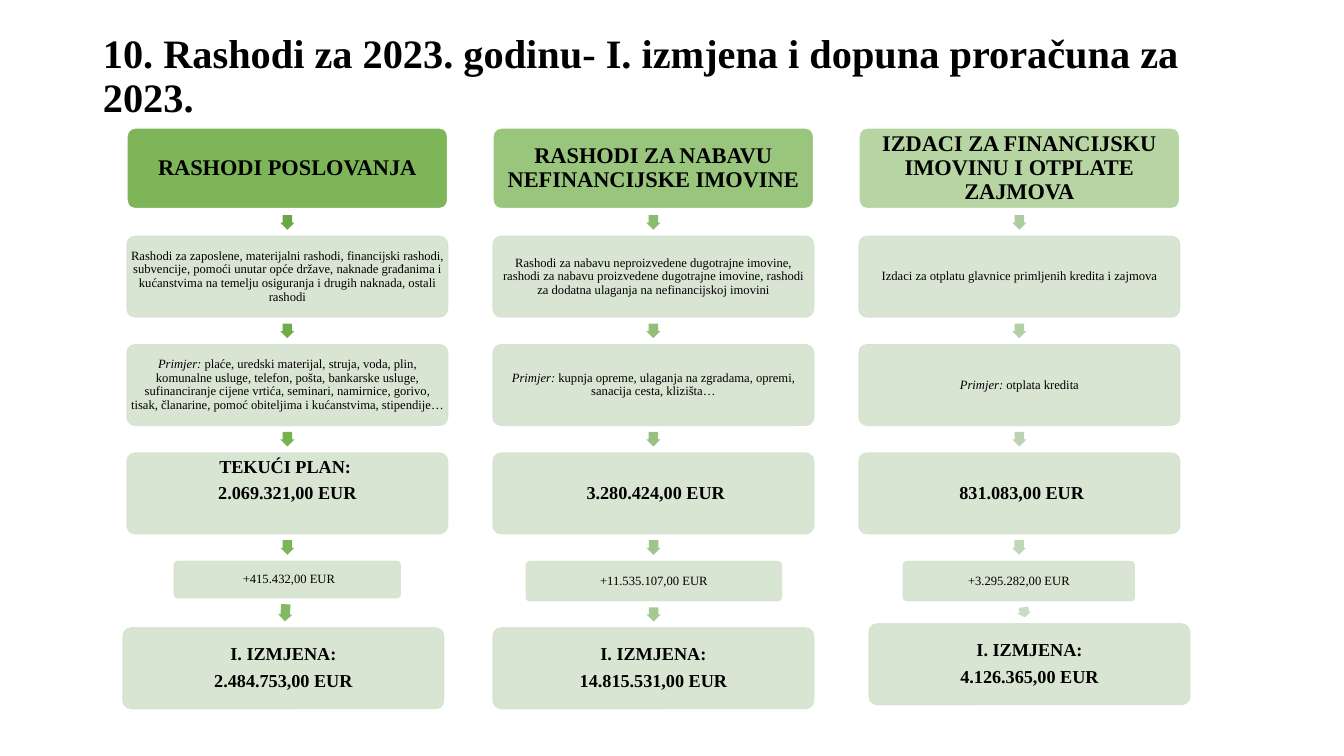
import math
from collections import namedtuple

from lxml import etree
from pptx import Presentation
from pptx.dml.color import RGBColor
from pptx.enum.shapes import MSO_SHAPE
from pptx.enum.text import MSO_ANCHOR, MSO_AUTO_SIZE, PP_ALIGN
from pptx.oxml.ns import qn
from pptx.util import Inches, Pt

ROUNDED, ARROW = MSO_SHAPE.ROUNDED_RECTANGLE, MSO_SHAPE.RIGHT_ARROW
TOP, MIDDLE = MSO_ANCHOR.TOP, MSO_ANCHOR.MIDDLE
LEFT, CENTER = PP_ALIGN.LEFT, PP_ALIGN.CENTER
NO_FIT = MSO_AUTO_SIZE.NONE

BLACK = RGBColor(0x00, 0x00, 0x00)
WHITE = RGBColor(0xFF, 0xFF, 0xFF)
GREEN = RGBColor(0x70, 0xAD, 0x47)
PALE_GREEN = RGBColor(0xD5, 0xE3, 0xCF)
FONT = "Times New Roman"
LEAD = "Primjer:"

# Inches
BOX_WIDTH, BOX_HEIGHT = 3.18, 0.8
FIRST_LEFT, FIRST_TOP = 1.26, 1.27
COLUMN_PITCH, ROW_PITCH = 3.63, 1.075
ARROW_WIDTH, ARROW_CLEARANCE = 0.14, 0.13

Box = namedtuple("Box", "left top width height")
Column = namedtuple("Column", "opacity arrows header content example plan change "
                              "revision change_box revision_box")

COLUMNS = [
    Column(90, ["6BA544", "70AD49", "76B350", "7DB65A", "83B864"],
           "RASHODI POSLOVANJA",
           "Rashodi za zaposlene, materijalni rashodi, financijski rashodi, "
           "subvencije, pomoći unutar opće države, naknade građanima i kućanstvima "
           "na temelju osiguranja i drugih naknada, ostali rashodi",
           "Primjer: plaće, uredski materijal, struja, voda, plin, komunalne usluge, "
           "telefon, pošta, bankarske usluge, sufinanciranje cijene vrtića, seminari, "
           "namirnice, gorivo, tisak, članarine, pomoć obiteljima i kućanstvima, "
           "stipendije…",
           "TEKUĆI PLAN: \n2.069.321,00 EUR",
           " +415.432,00 EUR",
           " I. IZMJENA: \n2.484.753,00 EUR",
           Box(1.73, 5.57, 2.24, 0.36), Box(1.22, 6.23, BOX_WIDTH, BOX_HEIGHT)),
    Column(70, ["8ABB6E", "91BE78", "98C181", "9FC58B", "A6C894"],
           "RASHODI ZA NABAVU NEFINANCIJSKE IMOVINE",
           "Rashodi za nabavu neproizvedene dugotrajne imovine, rashodi za nabavu "
           "proizvedene dugotrajne imovine, rashodi za dodatna ulaganja na "
           "nefinancijskoj imovini",
           "Primjer: kupnja opreme, ulaganja na zgradama, opremi, sanacija cesta, "
           "klizišta…",
           " 3.280.424,00 EUR",
           "+11.535.107,00 EUR",
           " I. IZMJENA: \n14.815.531,00 EUR",
           Box(5.22, 5.57, 2.53, 0.39), Box(4.89, 6.23, BOX_WIDTH, BOX_HEIGHT)),
    Column(50, ["ADCC9E", "B4CFA7", "BBD3B0", "C2D7B9", "C9DBC1"],
           "IZDACI ZA FINANCIJSKU IMOVINU I OTPLATE ZAJMOVA",
           "Izdaci za otplatu glavnice primljenih kredita i zajmova",
           "Primjer: otplata kredita",
           " 831.083,00 EUR",
           "+3.295.282,00 EUR",
           " I. IZMJENA: \n4.126.365,00 EUR",
           Box(8.96, 5.57, 2.29, 0.39), Box(8.62, 6.19, BOX_WIDTH, BOX_HEIGHT)),
]


def set_opacity(color_format_owner, percent):
    """Add an alpha value to the solid fill of a shape's fill or line element."""
    color = color_format_owner.find(qn("a:solidFill"))[0]
    etree.SubElement(color, qn("a:alpha"), val=str(percent * 1000))


def add_preset(page, preset, box):
    shape = page.shapes.add_shape(preset, *(Inches(length) for length in box))
    shape.shadow.inherit = False
    shape.fill.solid()
    return shape


def write_text(shape, text, size, bold, anchor):
    frame = shape.text_frame
    frame.word_wrap = True
    frame.vertical_anchor = anchor
    inset = Inches(0.01 if size < 10 else 0.02)
    frame.margin_left = frame.margin_right = inset
    frame.margin_top = frame.margin_bottom = inset
    for index, line in enumerate(text.split("\n")):
        para = frame.add_paragraph() if index else frame.paragraphs[0]
        para.alignment = CENTER
        para.line_spacing = 0.9
        para.space_after = Pt(round(size * 0.38))
        para.font.name, para.font.size = FONT, Pt(size)
        para.font.bold, para.font.color.rgb = bold, BLACK
        if line.startswith(LEAD):
            lead = para.add_run()
            lead.text = LEAD
            lead.font.italic = True
            line = line[len(LEAD):]
        para.add_run().text = line


def add_card(page, box, text, size, bold=False, anchor=MIDDLE,
             fill=PALE_GREEN, opacity=90):
    card = add_preset(page, ROUNDED, box)
    card.adjustments[0] = 0.1
    card.fill.fore_color.rgb = fill
    set_opacity(card._element.spPr, opacity)
    card.line.width = Pt(1)
    if fill == PALE_GREEN:
        card.line.color.rgb = PALE_GREEN
        set_opacity(card.line._get_or_add_ln(), opacity)
    else:
        card.line.color.rgb = WHITE
    write_text(card, text, size, bold, anchor)


def add_arrow(page, upper, lower, color):
    """Centre an arrow in the gap, pointing from one box's middle to the next's."""
    upper_x, lower_x = (box.left + box.width / 2 for box in (upper, lower))
    upper_y, lower_y = (box.top + box.height / 2 for box in (upper, lower))
    bottom = upper.top + upper.height
    length = lower.top - bottom - ARROW_CLEARANCE
    center_x, center_y = (upper_x + lower_x) / 2, (bottom + lower.top) / 2
    arrow = add_preset(page, ARROW, Box(center_x - length / 2,
                                        center_y - ARROW_WIDTH / 2,
                                        length, ARROW_WIDTH))
    arrow.adjustments[0], arrow.adjustments[1] = 0.667, 0.5
    arrow.rotation = round(math.degrees(math.atan2(lower_y - upper_y,
                                                   lower_x - upper_x)))
    arrow.fill.fore_color.rgb = RGBColor.from_string(color)
    arrow.line.fill.background()


def add_column(page, left, column):
    boxes = [Box(left, FIRST_TOP + row * ROW_PITCH, BOX_WIDTH, BOX_HEIGHT)
             for row in range(4)]
    boxes += [column.change_box, column.revision_box]
    plan_anchor = TOP if "\n" in column.plan else MIDDLE
    add_card(page, boxes[0], column.header, 16, bold=True,
             fill=GREEN, opacity=column.opacity)
    add_card(page, boxes[1], column.content, 9)
    add_card(page, boxes[2], column.example, 9)
    add_card(page, boxes[3], column.plan, 13, bold=True, anchor=plan_anchor)
    add_card(page, boxes[4], column.change, 9)
    add_card(page, boxes[5], column.revision, 13, bold=True)
    for upper, lower, color in zip(boxes, boxes[1:], column.arrows):
        add_arrow(page, upper, lower, color)


def set_title(page, box, text):
    title = page.shapes.title
    title.left, title.top, title.width, title.height = map(Inches, box)
    frame = title.text_frame
    frame.text = text
    frame.word_wrap = True
    frame.auto_size = NO_FIT
    frame.vertical_anchor = MIDDLE
    para = frame.paragraphs[0]
    para.alignment = LEFT
    para.line_spacing = 0.9
    para.font.name, para.font.size = FONT, Pt(28.8)
    para.font.bold, para.font.color.rgb = True, BLACK


def main():
    deck = Presentation()
    deck.slide_width, deck.slide_height = Inches(13.33), Inches(7.5)
    page = deck.slides.add_slide(deck.slide_layouts[5])
    set_title(page, Box(0.92, 0.4, 11.5, 0.74),
              "10. Rashodi za 2023. godinu- I. izmjena i dopuna proračuna za 2023.")
    for index, column in enumerate(COLUMNS):
        add_column(page, FIRST_LEFT + index * COLUMN_PITCH, column)
    deck.save("out.pptx")


if __name__ == "__main__":
    main()
